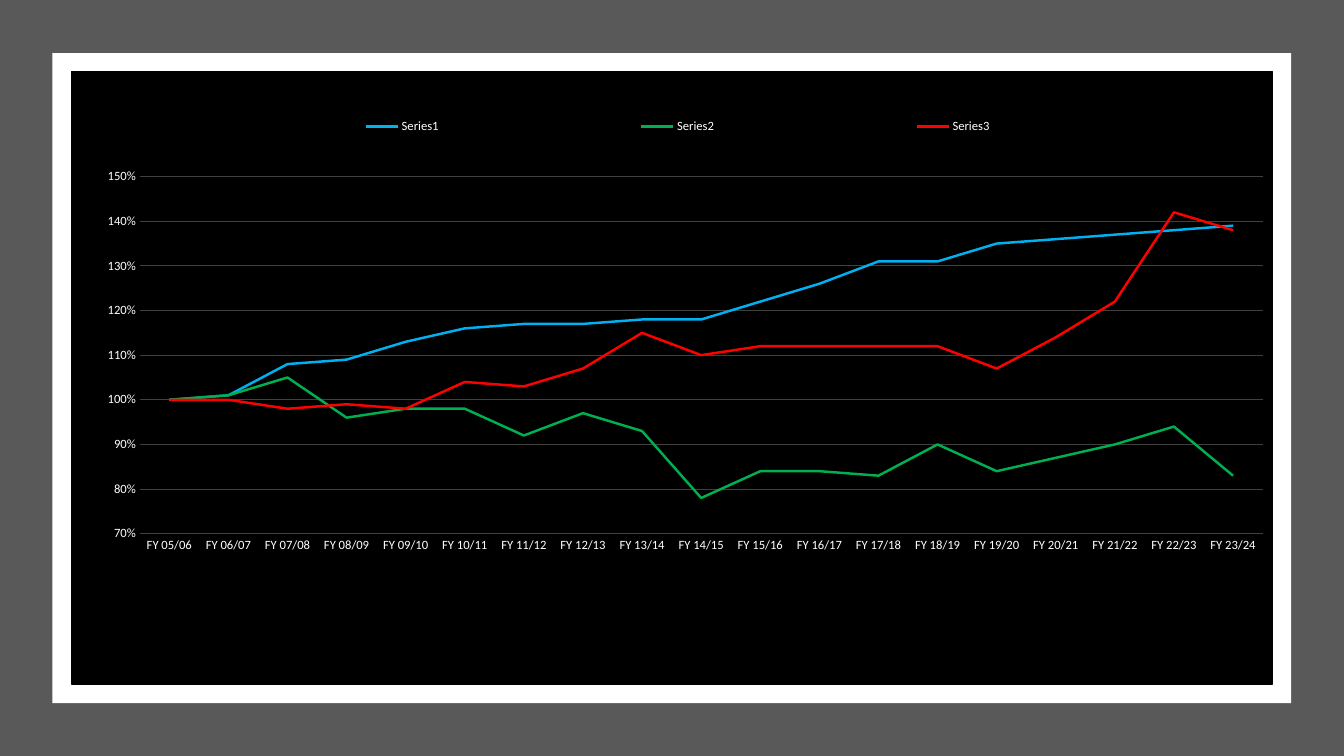
"""Build a slide with a framed black line chart of three indexed series by year."""
from lxml import etree
from pptx import Presentation
from pptx import util as u
from pptx.chart.data import CategoryChartData
from pptx.dml.color import RGBColor
from pptx.enum import chart as ch, shapes
from pptx.oxml import parse_xml
from pptx.oxml.ns import nsdecls, qn

HUES = {"back": "595959", "frame": "FFFFFF", "panel": "000000",
        "text": "FFFFFF", "grid": "404040"}
FACE = "Calibri"
YEARS = [f"FY {y:02d}/{y + 1:02d}" for y in range(5, 24)]
LINES = {
    "Series1": ("00B0F0", [1, 1.01, 1.08, 1.09, 1.13, 1.16, 1.17, 1.17, 1.18, 1.18,
                           1.22, 1.26, 1.31, 1.31, 1.35, 1.36, 1.37, 1.38, 1.39]),
    "Series2": ("00B050", [1, 1.01, 1.05, 0.96, 0.98, 0.98, 0.92, 0.97, 0.93, 0.78,
                           0.84, 0.84, 0.83, 0.9, 0.84, 0.87, 0.9, 0.94, 0.83]),
    "Series3": ("FF0000", [1, 1, 0.98, 0.99, 0.98, 1.04, 1.03, 1.07, 1.15, 1.1,
                           1.12, 1.12, 1.12, 1.12, 1.07, 1.14, 1.22, 1.42, 1.38]),
}


def add_box(slide, hue, left, top, width, height):
    box = slide.shapes.add_shape(shapes.MSO_SHAPE.RECTANGLE, u.Cm(left), u.Cm(top),
                                 u.Cm(width), u.Cm(height))
    box.shadow.inherit = False
    box.fill.solid()
    box.fill.fore_color.rgb = RGBColor.from_string(HUES[hue])
    box.line.fill.background()


def set_font(font, size):
    font.name = FACE
    font.size = u.Pt(size)
    font.color.rgb = RGBColor.from_string(HUES["text"])


def set_line(line, hue, width):
    line.color.rgb = RGBColor.from_string(hue)
    line.width = u.Pt(width)


def place(part, index, left, top, width, height, inner=False):
    old = part.find(qn("c:layout"))
    if old is not None:
        part.remove(old)
    layout = parse_xml(f'<c:layout {nsdecls("c")}><c:manualLayout/></c:layout>')
    rules = [("layoutTarget", "inner")] if inner else []
    rules += [("xMode", "edge"), ("yMode", "edge"),
              ("x", left), ("y", top), ("w", width), ("h", height)]
    for tag, value in rules:
        etree.SubElement(layout[0], qn(f"c:{tag}")).set("val", str(value))
    part.insert(index, layout)


def fill_panel(chart):
    paint = f'<a:solidFill><a:srgbClr val="{HUES["panel"]}"/></a:solidFill>'
    panel = parse_xml(f'<c:spPr {nsdecls("c", "a")}>{paint}'
                      f'<a:ln w="{u.Pt(1)}">{paint}</a:ln></c:spPr>')
    chart._chartSpace.find(qn("c:txPr")).addprevious(panel)


def style_axes(chart):
    for axis in (chart.category_axis, chart.value_axis):
        axis.major_tick_mark = axis.minor_tick_mark = ch.XL_TICK_MARK.NONE
        axis.format.line.fill.background()
        set_font(axis.tick_labels.font, 9)
    scale = chart.value_axis
    scale.minimum_scale, scale.maximum_scale, scale.major_unit = 0.7, 1.5, 0.1
    scale.tick_labels.number_format = "0%"
    scale.tick_labels.number_format_is_linked = False
    set_line(scale.major_gridlines.format.line, HUES["grid"], 0.75)


def add_graph(slide, left, top, width, height):
    data = CategoryChartData(number_format="0%")
    data.categories = YEARS
    for name, (_, values) in LINES.items():
        data.add_series(name, values)
    chart = slide.shapes.add_chart(ch.XL_CHART_TYPE.LINE, u.Cm(left), u.Cm(top),
                                   u.Cm(width), u.Cm(height), data).chart
    chart.has_title = False
    set_font(chart.font, 10)
    fill_panel(chart)
    style_axes(chart)
    plot = chart.plots[0]
    plot.vary_by_categories = False
    for series, (hue, _) in zip(plot.series, LINES.values()):
        series.smooth = False
        series.marker.style = ch.XL_MARKER_STYLE.NONE
        set_line(series.format.line, hue, 1.75)
    chart.has_legend = True
    legend = chart.legend
    legend.position = ch.XL_LEGEND_POSITION.TOP
    legend.include_in_layout = False
    set_font(legend.font, 9)
    place(legend._element, 1, 0.08, 0.04, 0.85, 0.1)
    area = chart._chartSpace.chart.plotArea
    place(area, 0, 0.057, 0.172, 0.935, 0.583, inner=True)


def main():
    deck = Presentation()
    deck.slide_width, deck.slide_height = u.Cm(33.87), u.Cm(19.05)
    slide = deck.slides.add_slide(deck.slide_layouts[6])
    add_box(slide, "back", 0, 0, 33.87, 19.05)
    add_box(slide, "frame", 1.32, 1.34, 31.22, 16.38)
    add_graph(slide, 1.78, 1.78, 30.3, 15.47)
    deck.save("out.pptx")


if __name__ == "__main__":
    main()
